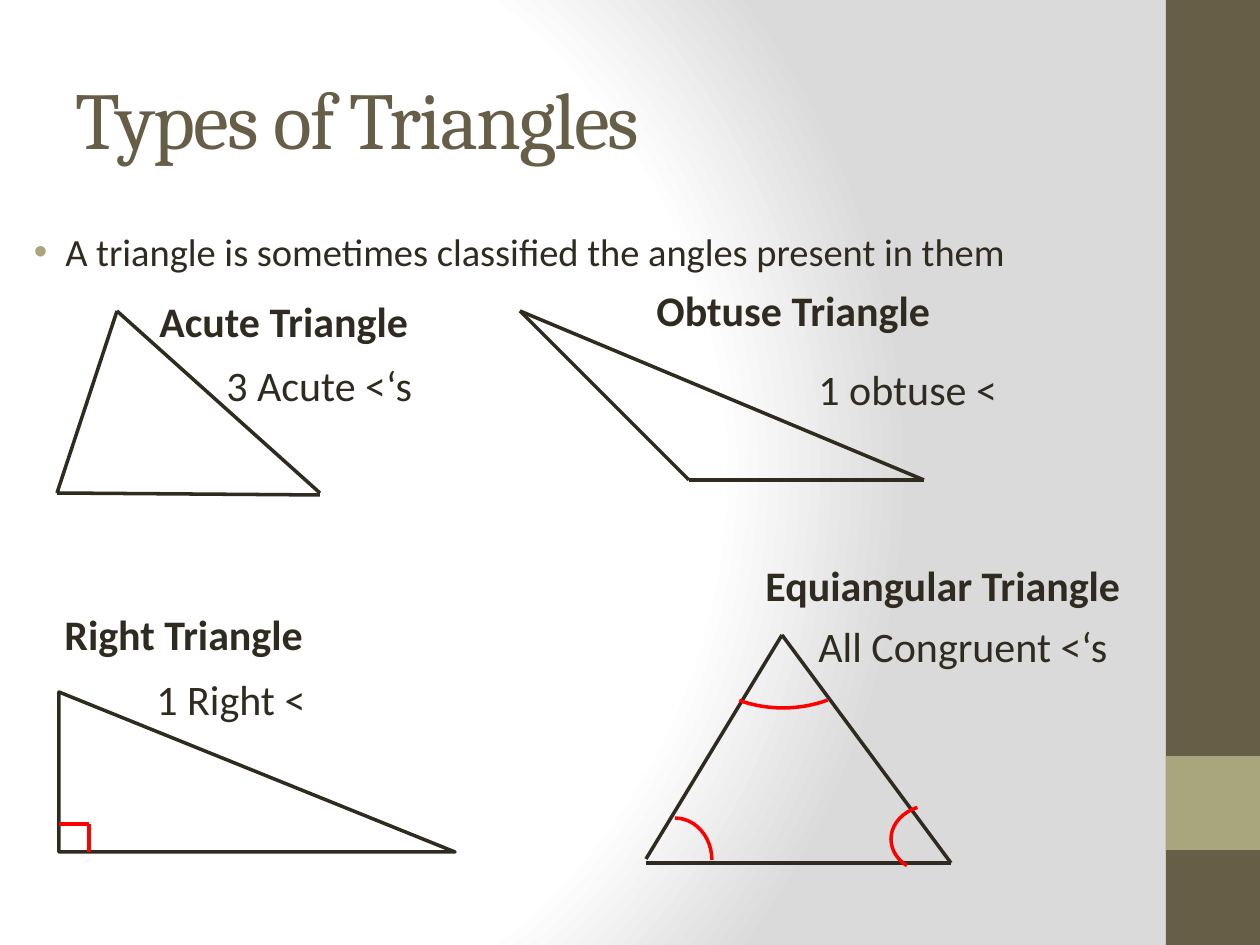
from lxml import etree
from pptx import Presentation
from pptx import util as u
from pptx.dml.color import RGBColor
from pptx.enum import shapes, text
from pptx.oxml.ns import qn

SCALE = 914400 / 126
INK, RED, BROWN, OLIVE, WHITE = "2F2B20", "FF0000", "675E47", "A9A57C", "FFFFFF"
KIND = shapes.MSO_SHAPE

STOPS = [(0, WHITE), (75, WHITE), (100, "DADADA")]
FOCUS = {"l": 20, "t": 50, "r": 100, "b": 50}
BARS = [((1166, 0, 94, 945), BROWN), ((1166, 756, 94, 94), OLIVE)]
TITLE = "Types of Triangles"
POINT = "A triangle is sometimes classified the angles present in them"
NAMES = [
    ("Acute Triangle", 147, 289),
    ("Obtuse Triangle", 644, 278),
    ("Right Triangle", 52, 602),
    ("Equiangular Triangle", 753, 553),
]
NOTES = [
    ("3 Acute <‘s", 214, 353),
    ("1 obtuse <", 806, 357),
    ("1 Right <", 144, 667),
    ("All Congruent <‘s", 806, 614),
]
ACUTE = [(117, 311, 320, 493), (57, 493, 320, 495), (117, 311, 57, 493)]
OBTUSE = [(520, 311, 689, 480), (689, 480, 924, 480), (520, 311, 924, 480)]
EQUAL = [(782, 635, 646, 859), (782, 635, 951, 863), (646, 863, 951, 863)]
ARCS = [
    ((638, 818, 74, 84), ()),
    ((891, 805, 84, 68), (80.59, 146.3)),
    ((667, 504, 232, 204), (38.75, 68.9)),
]
RIGHT = (59, 692, 396, 160)
CORNER = [(59, 824, 89, 824), (89, 824, 89, 852)]


def px(*nums):
    return [u.Emu(round(n * SCALE)) for n in nums]


def hue(code):
    return RGBColor.from_string(code)


def pen(item, color):
    item.line.color.rgb = hue(color)
    item.line.width = u.Pt(2)


def shape(home, kind, box, fill=None, line=None, adj=()):
    item = home.add_shape(kind, *px(*box))
    item.shadow.inherit = False
    if fill:
        item.fill.solid()
        item.fill.fore_color.rgb = hue(fill)
    else:
        item.fill.background()
    if line:
        pen(item, line)
    else:
        item.line.fill.background()
    for i, val in enumerate(adj):
        item.adjustments[i] = val


def lines(home, ends, color=INK):
    for end in ends:
        item = home.add_connector(shapes.MSO_CONNECTOR.STRAIGHT, *px(*end))
        pen(item, color)
        etree.SubElement(item._element.spPr, qn("a:effectLst"))


def write(home, words, box, size=24, font="Calibri", color=INK, bold=False,
          mid=False, space=None, bullet=None):
    frame = home.add_textbox(*px(*box)).text_frame
    frame.word_wrap = True
    if mid:
        frame.vertical_anchor = text.MSO_ANCHOR.MIDDLE
    para = frame.paragraphs[0]
    run = para.add_run()
    run.text = words
    run.font.size = u.Pt(size)
    run.font.name = font
    run.font.bold = bold
    run.font.color.rgb = hue(color)
    if space:
        run._r.get_or_add_rPr().set("spc", str(space))
    if bullet:
        para.space_before = u.Pt(4)
        prop = para._p.get_or_add_pPr()
        prop.set("marL", str(u.Inches(0.38)))
        prop.set("indent", str(u.Inches(-0.25)))
        tint = etree.SubElement(prop, qn("a:buClr"))
        etree.SubElement(tint, qn("a:srgbClr"), val=bullet)
        etree.SubElement(prop, qn("a:buFont"), typeface="Arial")
        etree.SubElement(prop, qn("a:buChar"), char="•")


def backdrop(slide):
    slide.background.fill.gradient()
    grad = slide.element.find(".//" + qn("a:gradFill"))
    for kid in list(grad):
        grad.remove(kid)
    stops = etree.SubElement(grad, qn("a:gsLst"))
    for pos, color in STOPS:
        stop = etree.SubElement(stops, qn("a:gs"), pos=str(pos * 1000))
        etree.SubElement(stop, qn("a:srgbClr"), val=color)
    way = etree.SubElement(grad, qn("a:path"), {"path": "circle"})
    etree.SubElement(way, qn("a:fillToRect"),
                     {side: str(n * 1000) for side, n in FOCUS.items()})


def main():
    deck = Presentation()
    deck.slide_width, deck.slide_height = px(1260, 945)
    slide = deck.slides.add_slide(deck.slide_layouts[6])
    home = slide.shapes
    backdrop(slide)
    for box, color in BARS:
        shape(home, KIND.RECTANGLE, box, fill=color)
    write(home, TITLE, (63, 38, 1050, 158), size=46, font="Cambria",
          color=BROWN, mid=True, space=-100)
    write(home, POINT, (5, 222, 1103, 662), size=22, bullet=OLIVE)

    for sides in (ACUTE, OBTUSE):
        lines(home.add_group_shape().shapes, sides)
    group = home.add_group_shape().shapes
    lines(group, EQUAL)
    for box, adj in ARCS:
        shape(group, KIND.ARC, box, line=RED, adj=adj)
    group = home.add_group_shape().shapes
    shape(group, KIND.RIGHT_TRIANGLE, RIGHT, fill=WHITE, line=INK)
    lines(group, CORNER, RED)

    for labels, bold in ((NAMES, True), (NOTES, False)):
        for words, x, y in labels:
            write(home, words, (x, y, 410, 63), bold=bold)
    deck.save("out.pptx")


if __name__ == "__main__":
    main()
